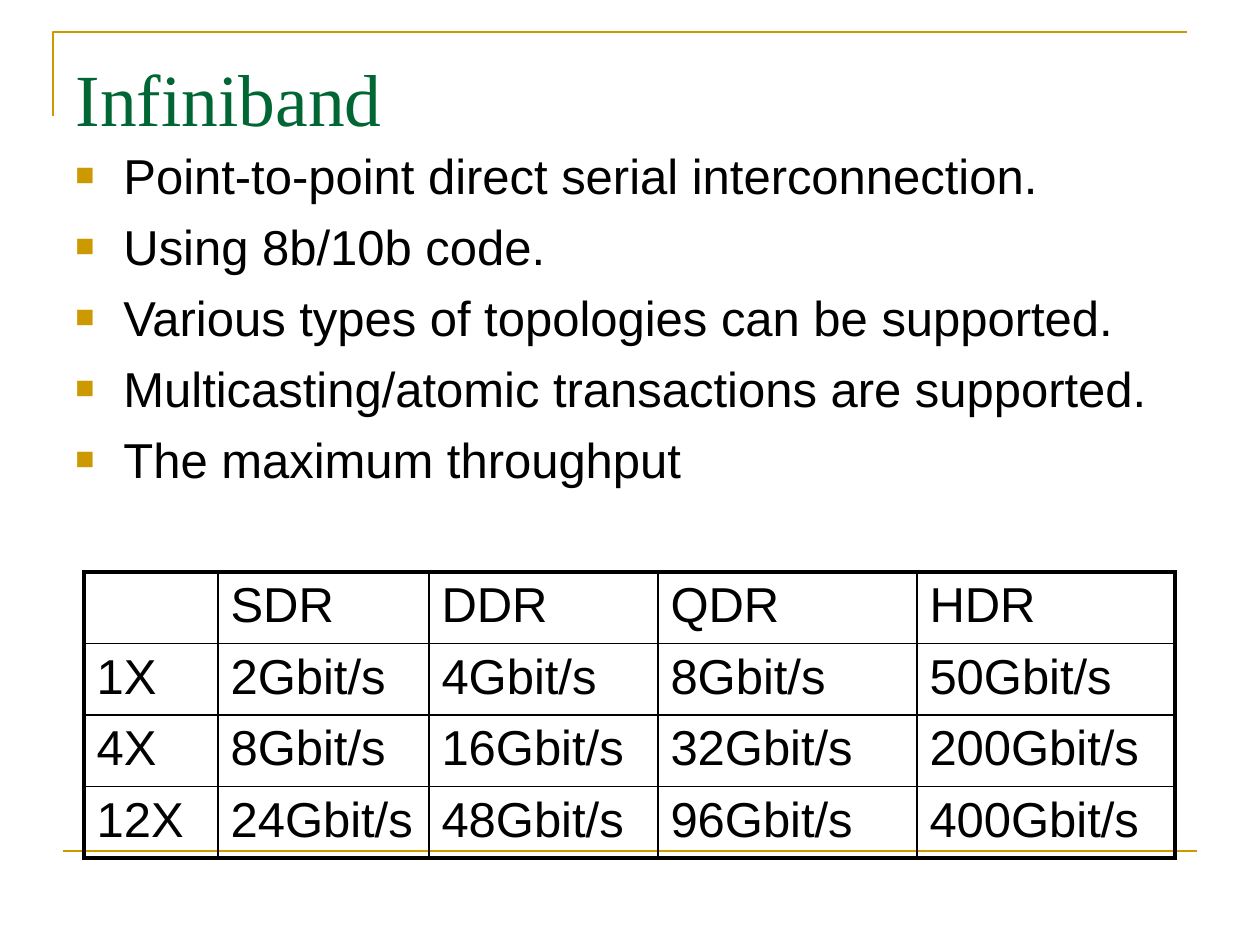
from dataclasses import dataclass

from lxml import etree
from pptx import Presentation
from pptx.dml.color import RGBColor
from pptx.enum.shapes import MSO_CONNECTOR
from pptx.enum.text import MSO_ANCHOR, PP_ALIGN
from pptx.oxml.ns import qn
from pptx.util import Emu, Pt

STRAIGHT = MSO_CONNECTOR.STRAIGHT
TOP = MSO_ANCHOR.TOP
LEFT = PP_ALIGN.LEFT
TITLE_ONLY = 5
EMU_PER_PX = 914400 / 126


@dataclass(frozen=True)
class Theme:
    gold: str = "CC9900"
    green: str = "006633"
    black: str = "000000"
    title_font: str = "Times New Roman"
    body_font: str = "Arial"
    title_size: int = 42
    body_size: int = 28
    bullet_gap: int = 7
    bullet_percent: int = 65
    rule_width: float = 1.5
    grid_width: float = 1
    frame_width: float = 2.25


@dataclass(frozen=True)
class Box:
    left: int
    top: int
    width: int
    height: int

    def emu(self) -> tuple[Emu, ...]:
        return tuple(px(n) for n in (self.left, self.top, self.width, self.height))


THEME = Theme()
TITLE_BOX = Box(63, 38, 1134, 157)
BULLET_BOX = Box(63, 145, 1113, 699)
TABLE_BOX = Box(84, 572, 1091, 286)
COLUMN_WIDTHS = (134, 211, 229, 259, 258)
BULLET_INDENT = 48
BULLETS = (
    "Point-to-point direct serial interconnection.",
    "Using 8b/10b code.",
    "Various types of topologies can be supported.",
    "Multicasting/atomic transactions are supported.",
    "The maximum throughput",
)
THROUGHPUT = (
    ("", "SDR", "DDR", "QDR", "HDR"),
    ("1X", "2Gbit/s", "4Gbit/s", "8Gbit/s", "50Gbit/s"),
    ("4X", "8Gbit/s", "16Gbit/s", "32Gbit/s", "200Gbit/s"),
    ("12X", "24Gbit/s", "48Gbit/s", "96Gbit/s", "400Gbit/s"),
)


def px(pixels: int) -> Emu:
    return Emu(round(pixels * EMU_PER_PX))


def add_run(paragraph, text: str, font: str, size: int, color: str) -> None:
    run = paragraph.add_run()
    run.text = text
    run.font.name = font
    run.font.size = Pt(size)
    run.font.color.rgb = RGBColor.from_string(color)


def style_rule(shape) -> None:
    shape.line.color.rgb = RGBColor.from_string(THEME.gold)
    shape.line.width = Pt(THEME.rule_width)


def add_corner_rule(slide) -> None:
    builder = slide.shapes.build_freeform(px(53), px(116), scale=1.0)
    builder.add_line_segments([(px(53), px(32)), (px(1187), px(32))], close=False)
    shape = builder.convert_to_shape()
    shape.shadow.inherit = False
    shape.fill.background()
    style_rule(shape)


def add_footer_rule(slide) -> None:
    rule = slide.shapes.add_connector(STRAIGHT, px(63), px(851), px(1197), px(851))
    etree.SubElement(rule._element.spPr, qn("a:effectLst"))
    style_rule(rule)


def fill_title(slide, text: str) -> None:
    title = slide.shapes.title
    title.left, title.top, title.width, title.height = TITLE_BOX.emu()
    frame = title.text_frame
    frame.vertical_anchor = TOP
    frame.margin_top = px(15)
    paragraph = frame.paragraphs[0]
    paragraph.alignment = LEFT
    add_run(paragraph, text, THEME.title_font, THEME.title_size, THEME.green)


def set_bullet(paragraph) -> None:
    properties = paragraph._p.get_or_add_pPr()
    properties.set("marL", str(px(BULLET_INDENT)))
    properties.set("indent", str(-px(BULLET_INDENT)))
    color = etree.SubElement(properties, qn("a:buClr"))
    etree.SubElement(color, qn("a:srgbClr"), val=THEME.gold)
    etree.SubElement(properties, qn("a:buSzPct"), val=str(THEME.bullet_percent * 1000))
    etree.SubElement(properties, qn("a:buFont"), typeface=THEME.body_font)
    etree.SubElement(properties, qn("a:buChar"), char="■")


def add_bullets(slide) -> None:
    frame = slide.shapes.add_textbox(*BULLET_BOX.emu()).text_frame
    frame.word_wrap = True
    frame.margin_top = 0
    for index, text in enumerate(BULLETS):
        paragraph = frame.add_paragraph() if index else frame.paragraphs[0]
        paragraph.space_before = Pt(THEME.bullet_gap)
        set_bullet(paragraph)
        add_run(paragraph, text, THEME.body_font, THEME.body_size, THEME.black)


def set_borders(cell, outer_sides: dict[str, bool]) -> None:
    """Draw all four sides, heavier where a side lies on the table's frame."""
    properties = cell._tc.get_or_add_tcPr()
    for side, is_outer in outer_sides.items():
        width = Pt(THEME.frame_width if is_outer else THEME.grid_width)
        line = etree.SubElement(properties, qn(f"a:ln{side}"), w=str(width))
        fill = etree.SubElement(line, qn("a:solidFill"))
        etree.SubElement(fill, qn("a:srgbClr"), val=THEME.black)


def add_throughput_table(slide) -> None:
    row_count, column_count = len(THROUGHPUT), len(COLUMN_WIDTHS)
    table = slide.shapes.add_table(row_count, column_count, *TABLE_BOX.emu()).table
    table.first_row = False
    table.horz_banding = False
    for column, width in zip(table.columns, COLUMN_WIDTHS):
        column.width = px(width)
    for r, values in enumerate(THROUGHPUT):
        for c, text in enumerate(values):
            cell = table.cell(r, c)
            set_borders(cell, {
                "L": c == 0,
                "R": c == column_count - 1,
                "T": r == 0,
                "B": r == row_count - 1,
            })
            cell.fill.background()
            if text:
                paragraph = cell.text_frame.paragraphs[0]
                add_run(paragraph, text, THEME.body_font, THEME.body_size, THEME.black)


def main() -> None:
    presentation = Presentation()
    presentation.slide_width = px(1260)
    presentation.slide_height = px(945)
    slide = presentation.slides.add_slide(presentation.slide_layouts[TITLE_ONLY])
    add_corner_rule(slide)
    add_footer_rule(slide)
    fill_title(slide, "Infiniband")
    add_bullets(slide)
    add_throughput_table(slide)
    presentation.save("out.pptx")


if __name__ == "__main__":
    main()
